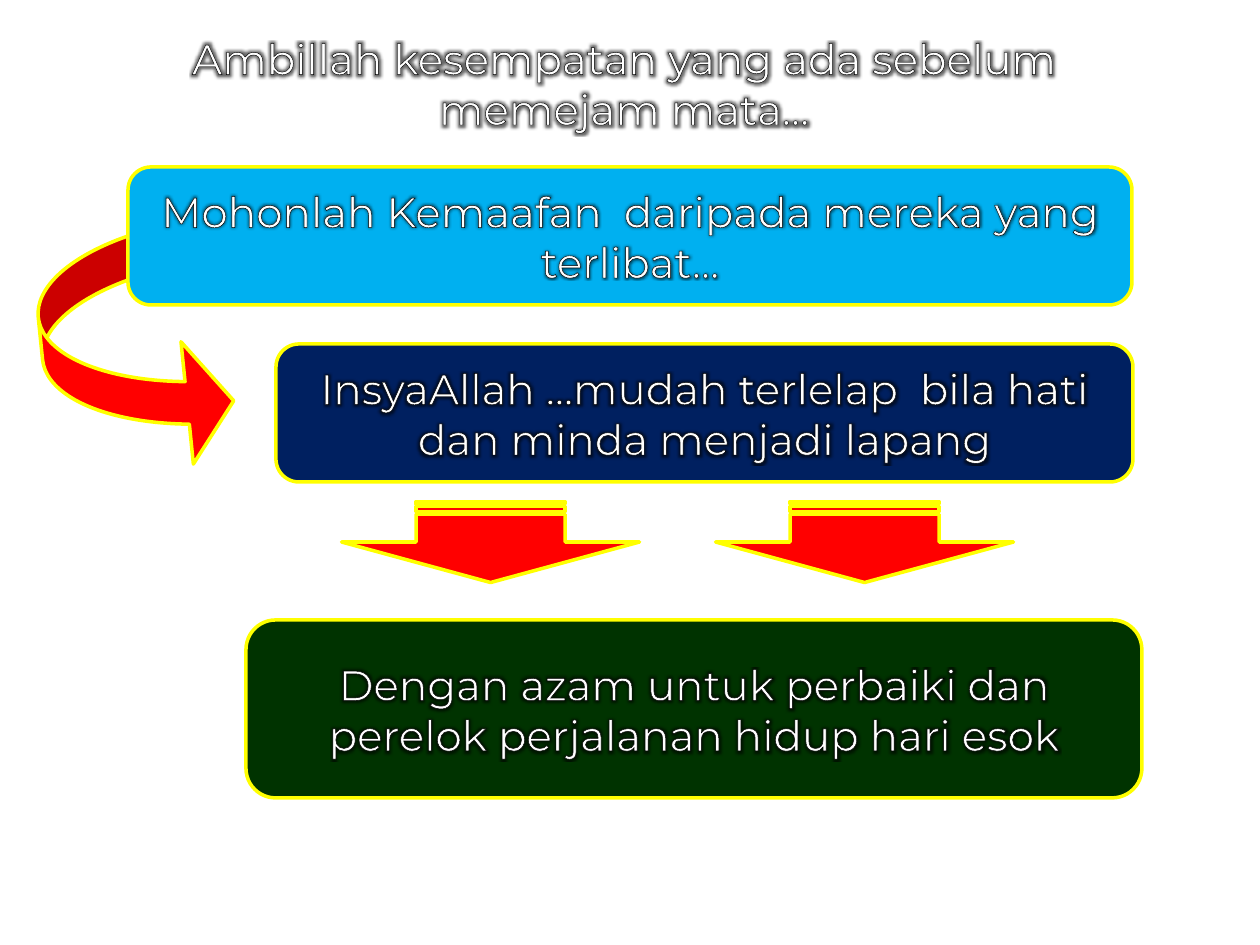
from dataclasses import dataclass
from lxml.etree import fromstring
from pptx import Presentation
from pptx.dml.color import RGBColor
from pptx.enum.shapes import MSO_SHAPE
from pptx.enum.text import MSO_ANCHOR, MSO_AUTO_SIZE, PP_ALIGN
from pptx.util import Pt

SCALE = 914400 / 126  # EMU in one px
NS = 'xmlns:a="http://schemas.openxmlformats.org/drawingml/2006/main"'


@dataclass(frozen=True)
class Theme:
    font: str = "Montserrat"
    size: int = 24
    text: str = "FFFFFF"
    edge: str = "FFFF00"
    arrow: str = "FF0000"
    sky: str = "00B0F0"
    navy: str = "002060"
    green: str = "003300"


class Page:
    def __init__(self, deck, theme):
        self.theme = theme
        self.slide = deck.slides.add_slide(deck.slide_layouts[5])

    def label(self, shape, text):
        frame = shape.text_frame
        form = {"word_wrap": True, "auto_size": MSO_AUTO_SIZE.NONE,
                "vertical_anchor": MSO_ANCHOR.MIDDLE}
        for key, value in form.items():
            setattr(frame, key, value)
        para = frame.paragraphs[0]
        para.alignment = PP_ALIGN.CENTER
        run = para.add_run()
        run.text = text
        run.font.color.rgb = RGBColor.from_string(self.theme.text)
        for key, value in {"name": self.theme.font, "size": Pt(self.theme.size)}.items():
            setattr(run.font, key, value)
        self.glow(run)

    def glow(self, run):
        # Thin black outline and a soft dark halo around the letters
        props = run.font._element
        props.insert(0, fromstring(
            f'<a:ln {NS} w="9525"><a:solidFill><a:srgbClr val="000000"/></a:solidFill></a:ln>'))
        props[1].addnext(fromstring(
            f'<a:effectLst {NS}><a:glow rad="50800"><a:srgbClr val="000000">'
            '<a:alpha val="60000"/></a:srgbClr></a:glow></a:effectLst>'))

    def title(self, text, *area):
        shape = self.slide.shapes.title
        for key, value in zip(("left", "top", "width", "height"), area):
            setattr(shape, key, round(value * SCALE))
        self.label(shape, text)

    def shape(self, kind, fill, *area):
        shape = self.slide.shapes.add_shape(kind, *(round(v * SCALE) for v in area))
        shape.shadow.inherit = False
        shape.fill.solid()
        shape.fill.fore_color.rgb = RGBColor.from_string(fill)
        shape.line.color.rgb = RGBColor.from_string(self.theme.edge)
        shape.line.width = Pt(2)
        return shape

    def box(self, text, fill, *area):
        self.label(self.shape(MSO_SHAPE.ROUNDED_RECTANGLE, fill, *area), text)

    def arrow(self, kind, turn, *area, bends=()):
        shape = self.shape(kind, self.theme.arrow, *area)
        shape.rotation = turn
        for i, bend in enumerate(bends):
            shape.adjustments[i] = bend


def main():
    deck = Presentation()
    deck.slide_width, deck.slide_height = round(1260 * SCALE), round(945 * SCALE)
    theme = Theme()
    page = Page(deck, theme)

    # Heading
    page.title("Ambillah kesempatan yang ada sebelum memejam mata…", 137, 39, 974, 88)

    # Steps, with the curved arrow tucked behind the first
    page.box("InsyaAllah …mudah terlelap  bila hati dan minda menjadi lapang",
             theme.navy, 276, 344, 857, 138)
    page.arrow(MSO_SHAPE.CURVED_RIGHT_ARROW, 354.2, 42, 226, 186, 246,
               bends=(0.23, 1.12, 0.25))
    page.box("Mohonlah Kemaafan  daripada mereka yang terlibat…",
             theme.sky, 128, 167, 1004, 138)
    page.box("Dengan azam untuk perbaiki dan perelok perjalanan hidup hari esok",
             theme.green, 246, 620, 896, 178)

    # Arrows down to the last step
    for left in (824, 450):
        page.arrow(MSO_SHAPE.STRIPED_RIGHT_ARROW, 90, left, 393, 81, 298)

    deck.save("out.pptx")


if __name__ == "__main__":
    main()
